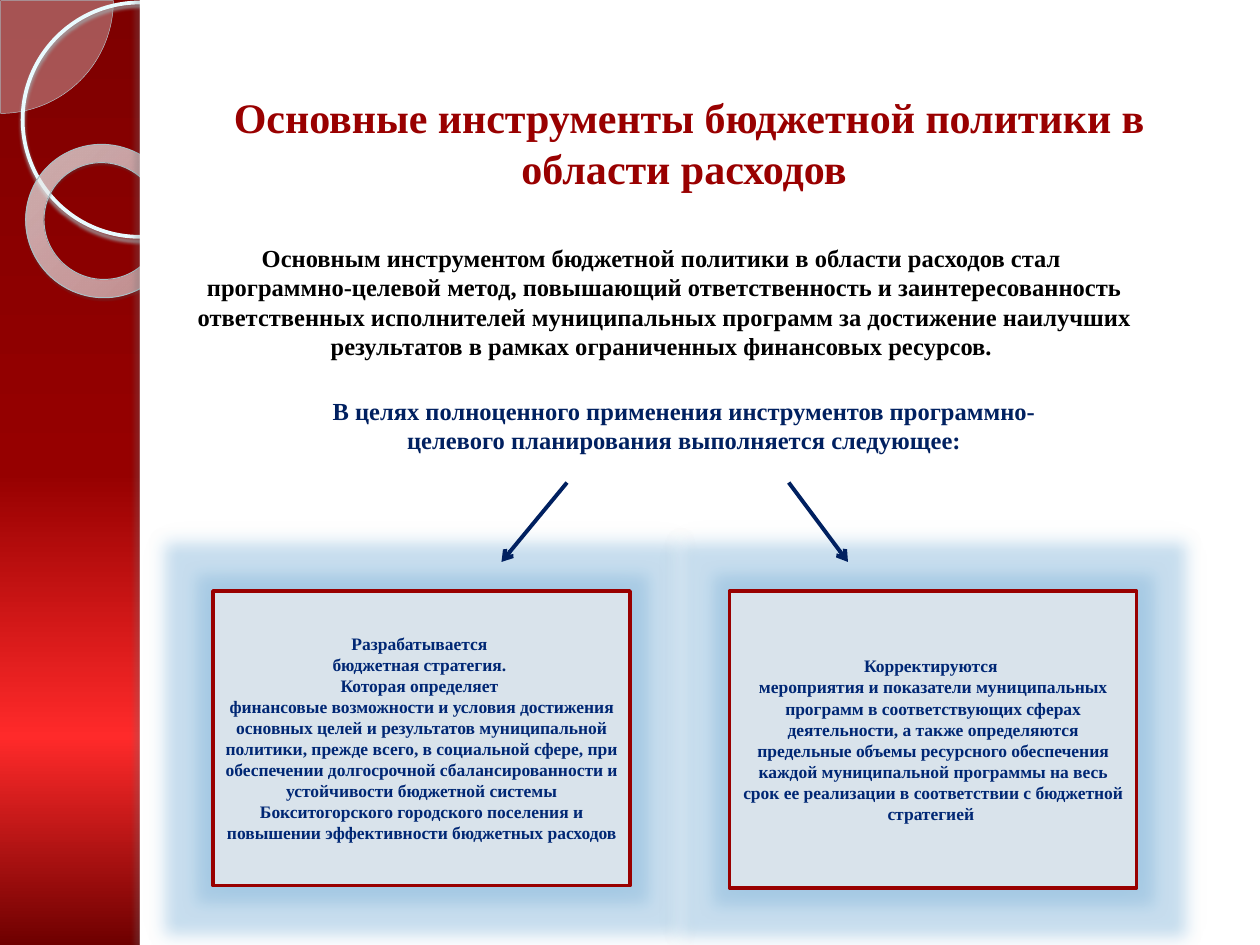
from lxml.etree import SubElement as Sub
from pptx import Presentation
from pptx.dml.color import RGBColor
from pptx.enum.shapes import MSO_CONNECTOR as Link, MSO_SHAPE as Kind
from pptx.enum.text import MSO_ANCHOR as Anchor, PP_ALIGN as Align
from pptx.oxml.ns import qn
from pptx.util import Inches, Pt

WIDE, HIGH = 10, 7.5
RED, NAVY, INK, PALE, WHITE = "990000", "002060", "002774", "D9E3EB", "FFFFFF"
FACE = "Times New Roman"


def rgb(code):
    """Turn a hex string into a colour."""
    return RGBColor.from_string(code)


def node(parent, tag, **attrs):
    """Add one drawing element with its attributes."""
    return Sub(parent, qn("a:" + tag), {k: str(v) for k, v in attrs.items()})


def tint(parent, code, alpha=100):
    """Add a colour with its opacity in percent."""
    item = node(parent, "srgbClr", val=code)
    if alpha < 100:
        node(item, "alpha", val=alpha * 1000)


def grade(parent, stops):
    """Add a gradient fill of (place, colour, opacity) stops."""
    fill = node(parent, "gradFill", rotWithShape=1)
    row = node(fill, "gsLst")
    for pos, code, alpha in stops:
        tint(node(row, "gs", pos=pos * 1000), code, alpha)
    return fill


def shade(shape, code, alpha, blur, dist, turn):
    """Give a shape an outer shadow."""
    drop = node(shape._element.spPr.find(qn("a:effectLst")), "outerShdw",
                blurRad=Pt(blur), dist=Pt(dist), dir=turn * 60000,
                algn="ctr", rotWithShape=0)
    tint(drop, code, alpha)


def draw(slide, kind, box, fill=None, line=None, width=1):
    """Add a preset shape with plain fill and line."""
    shape = slide.shapes.add_shape(kind, *map(Inches, box))
    shape.shadow.inherit = False
    if fill:
        shape.fill.solid()
        shape.fill.fore_color.rgb = rgb(fill)
    else:
        shape.fill.background()
    if line:
        shape.line.color.rgb = rgb(line)
        shape.line.width = Pt(width)
    else:
        shape.line.fill.background()
    return shape


def write(frame, lines, size, code, anchor=Anchor.TOP):
    """Fill a text frame with centred bold paragraphs."""
    frame.word_wrap = True
    frame.vertical_anchor = anchor
    for i, line in enumerate(lines):
        para = frame.add_paragraph() if i else frame.paragraphs[0]
        para.alignment = Align.CENTER
        run = para.add_run()
        run.text = line
        font = run.font
        font.name, font.size, font.bold = FACE, Pt(size), True
        font.color.rgb = rgb(code)


def back(slide):
    """Paint the red gradient behind the slide."""
    slide.background.fill.solid()
    props = slide.background._cSld.bg.bgPr
    props.remove(props.find(qn("a:solidFill")))
    fill = grade(props, [(0, "7E0000", 100), (50, "960000", 96),
                         (78, "FF2A2A", 100), (100, "6E0000", 100)])
    node(fill, "lin", ang=5400000, scaled=0)
    props.insert(0, fill)


def band(slide, edge):
    """Draw the rings of the side band and the white page from its edge."""
    pie = draw(slide, Kind.PIE, (-0.89, -0.89, 1.79, 1.79), "F8FCFD", "B7CBD1", 0.25)
    pie.adjustments[0], pie.adjustments[1] = 0, 54.02
    node(pie._element.spPr.find(qn("a:solidFill"))[0], "alpha", val=33000)

    hoop = draw(slide, Kind.OVAL, (0.18, 0.02, 1.86, 1.86), None, "E9FAFE", 2.15)
    shade(hoop, "A1AEB1", 85, 2, 2, 90)

    ring = draw(slide, Kind.DONUT, (0.2, 1.15, 1.23, 1.21), None, "AABFC4", 0.58)
    ring.adjustments[0] = 0.12
    ring.rotation = 38.6
    props = ring._element.spPr
    fill = grade(props, [(0, "F9FDFE", 70), (70, "FCFEFF", 55), (100, "B1D8E2", 60)])
    way = node(fill, "path", path="circle")
    node(way, "fillToRect", l=-408000, t=-50000, r=508000, b=150000)
    props.replace(props.find(qn("a:noFill")), fill)
    shade(ring, "4E5759", 35, 1, 1.2, 75)

    draw(slide, Kind.RECTANGLE, (edge, 0, WIDE - edge, HIGH), WHITE)
    strip = draw(slide, Kind.RECTANGLE, (edge, 0, 0.08, HIGH), WHITE)
    shade(strip, "6D7476", 25, 3, 3, 180)


def head(slide, box, text):
    """Place the title above the page."""
    title = slide.shapes.title
    title.left, title.top, title.width, title.height = map(Inches, box)
    write(title.text_frame, [text], 24, RED)
    slide.shapes._spTree.append(title._element)


def note(slide, box, lines, code):
    """Place a block of running text."""
    area = slide.shapes.add_textbox(*map(Inches, box))
    write(area.text_frame, lines, 14, code)


def card(slide, box, lines):
    """Draw a framed card with a soft blue glow."""
    shape = draw(slide, Kind.RECTANGLE, box, PALE, RED, 2)
    glow = node(shape._element.spPr.find(qn("a:effectLst")), "glow", rad=Pt(18))
    tint(glow, "8DBBDD", 45)
    shade(shape, "8DBBDD", 45, 14, 0, 0)
    write(shape.text_frame, lines, 10, INK, Anchor.MIDDLE)


def arrow(slide, start, end):
    """Draw an arrow between two points."""
    line = slide.shapes.add_connector(Link.STRAIGHT, *map(Inches, start + end))
    line.line.color.rgb = rgb(NAVY)
    line.line.width = Pt(2.25)
    node(line.line._get_or_add_ln(), "tailEnd", type="arrow")
    node(line._element.spPr, "effectLst")


def main():
    """Build and save the slide."""
    deck = Presentation()
    deck.slide_width, deck.slide_height = Inches(WIDE), Inches(HIGH)
    slide = deck.slides.add_slide(deck.slide_layouts[5])
    back(slide)
    band(slide, 1.11)
    head(slide, (1.69, 0.68, 7.56, 0.91),
         "Основные инструменты бюджетной политики в области расходов ")
    note(slide, (1.14, 1.88, 8.27, 1.04), [
        "Основным инструментом бюджетной политики в области расходов стал ",
        "программно-целевой метод, повышающий ответственность и "
        "заинтересованность ответственных исполнителей муниципальных программ "
        "за достижение наилучших результатов в рамках ограниченных финансовых "
        "ресурсов. "], "000000")
    note(slide, (2.32, 3.09, 6.22, 0.57), [
        "В целях полноценного применения инструментов программно-целевого "
        "планирования выполняется следующее:"], NAVY)
    card(slide, (1.69, 4.69, 3.31, 2.34), [
        "Разрабатывается ",
        "бюджетная стратегия. ",
        "Которая определяет ",
        "финансовые возможности и условия достижения основных целей и "
        "результатов муниципальной политики, прежде всего, в социальной сфере, "
        "при обеспечении долгосрочной сбалансированности и устойчивости "
        "бюджетной системы Бокситогорского городского поселения и повышении "
        "эффективности бюджетных расходов "])
    card(slide, (5.79, 4.69, 3.23, 2.36), [
        "Корректируются ",
        "мероприятия и показатели муниципальных программ в соответствующих "
        "сферах деятельности, а также определяются предельные объемы ресурсного "
        "обеспечения каждой муниципальной программы на весь срок ее реализации "
        "в соответствии с бюджетной стратегией "])
    arrow(slide, (4.5, 3.83), (3.98, 4.46))
    arrow(slide, (6.26, 3.83), (6.73, 4.46))
    deck.save("out.pptx")


if __name__ == "__main__":
    main()
